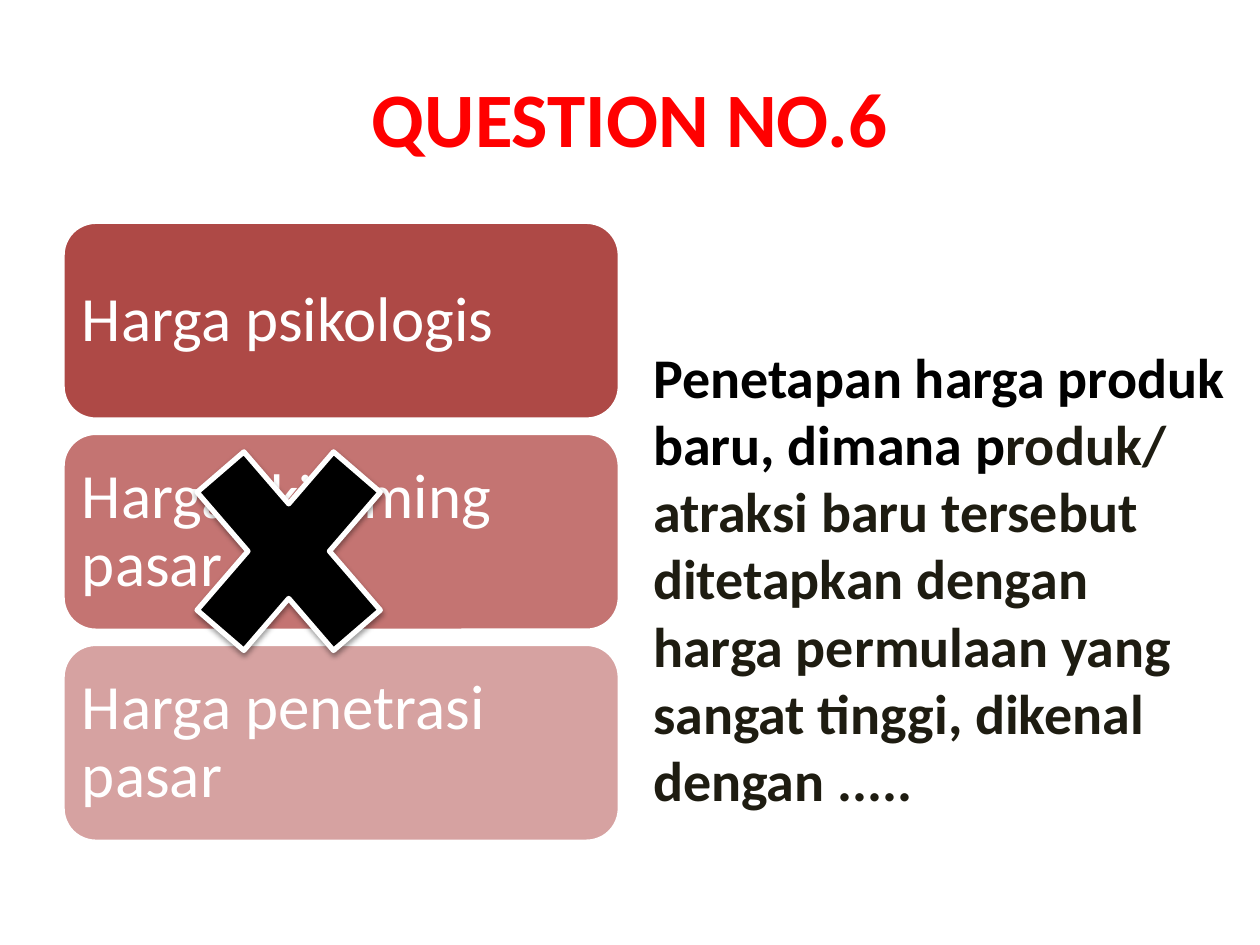
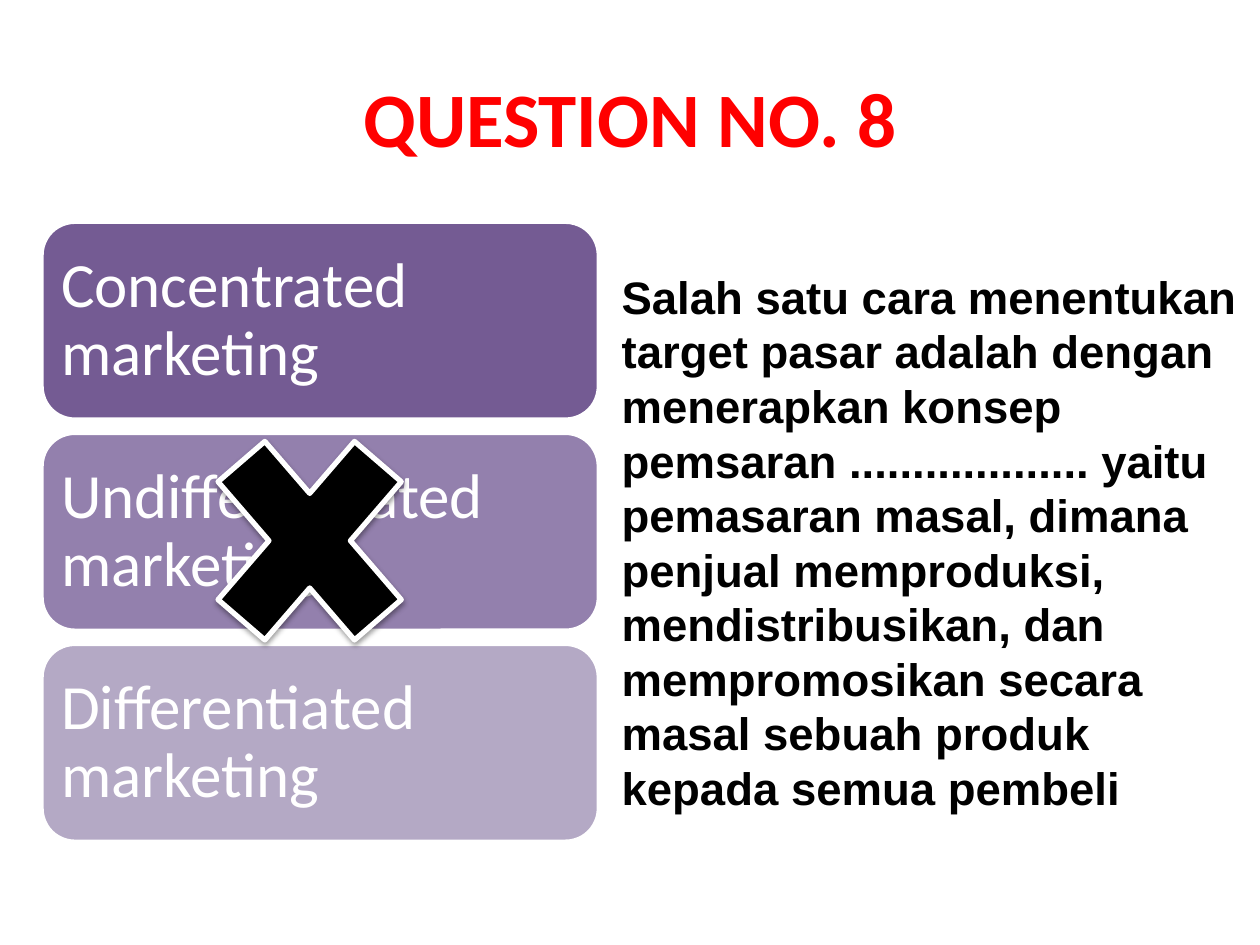
import pptx
import pptx.dml.color
import pptx.enum.shapes
import pptx.enum.text
import pptx.oxml
import pptx.oxml.ns
import pptx.util
from pptx.util import Pt

QUESTIONS = [
    {
        "title": "QUESTION NO.6",
        "answers": ["Harga psikologis", "Harga skimming pasar", "Harga penetrasi pasar"],
        "tints": ["AE4946", "C47472", "D6A2A1"],
        "answers_left": 36,
        "prompt": [
            ("Penetapan harga produk baru, dimana p", "000000"),
            ("roduk/ atraksi baru tersebut ditetapkan dengan harga permulaan "
             "yang sangat tinggi, dikenal dengan .....", "1E1C11"),
        ],
        "prompt_font": ("Calibri", 32),
        "prompt_area": (366, 192, 342, 276),
        "cross_corner": (90, 228),
    },
    {
        "title": "QUESTION NO. 8",
        "answers": ["Concentrated marketing", "Undifferentiated marketing",
                    "Differentiated marketing"],
        "tints": ["745B93", "9380AD", "B4A9C5"],
        "answers_left": 24,
        "prompt": [
            ("Salah satu cara menentukan target pasar adalah dengan menerapkan konsep "
             "pemsaran ................... yaitu pemasaran masal, dimana penjual "
             "memproduksi, mendistribusikan, dan mempromosikan secara masal sebuah "
             "produk kepada semua pembeli", "000000"),
        ],
        "prompt_font": ("Arial", 26),
        "prompt_area": (348, 150, 372, 264),
        "cross_corner": (102, 222),
    },
]

THEME = {
    "font": "Calibri",
    "title_color": "FF0000", "title_size": 44,
    "answer_color": "FFFFFF", "answer_size": 36,
    "outline": "FFFFFF", "cross": "000000",
}
SLIDE_SIZE = (720, 540)
TITLE_AREA = (36, 21.6, 648, 90)
ANSWER_TOP, ANSWER_WIDTH, ANSWER_HEIGHT, ANSWER_GAP = 127, 318, 112.6, 8
ANSWER_INSET = 5.4
CROSS_SIZE = (150, 174)
CROSS_SHADOW = (
    f'<a:outerShdw {pptx.oxml.ns.nsdecls("a")} blurRad="{Pt(3.1)}" dist="{Pt(1.6)}" '
    'dir="5400000" rotWithShape="0"><a:srgbClr val="000000">'
    '<a:alpha val="38000"/></a:srgbClr></a:outerShdw>'
)


def rgb(code):
    return pptx.dml.color.RGBColor.from_string(code)


def place(shape, area):
    shape.left, shape.top, shape.width, shape.height = map(Pt, area)


def add_run(paragraph, text, font, size, color, bold=False):
    run = paragraph.add_run()
    run.text = text
    run.font.name, run.font.size, run.font.bold = font, Pt(size), bold
    run.font.color.rgb = rgb(color)


def add_outlined(slide, preset, area, fill, line_width):
    shape = slide.shapes.add_shape(preset, *map(Pt, area))
    shape.fill.solid()
    shape.fill.fore_color.rgb = rgb(fill)
    shape.line.color.rgb = rgb(THEME["outline"])
    shape.line.width = Pt(line_width)
    shape.shadow.inherit = False
    return shape


def add_title(slide, text):
    title = slide.shapes.title
    place(title, TITLE_AREA)
    title.text_frame.vertical_anchor = pptx.enum.text.MSO_ANCHOR.MIDDLE
    paragraph = title.text_frame.paragraphs[0]
    paragraph.alignment = pptx.enum.text.PP_ALIGN.CENTER
    add_run(paragraph, text, THEME["font"], THEME["title_size"], THEME["title_color"], True)


def add_answers(slide, answers, tints, left):
    for row, (answer, tint) in enumerate(zip(answers, tints)):
        top = ANSWER_TOP + row * (ANSWER_HEIGHT + ANSWER_GAP)
        box = add_outlined(slide, pptx.enum.shapes.MSO_SHAPE.ROUNDED_RECTANGLE,
                           (left, top, ANSWER_WIDTH, ANSWER_HEIGHT), tint, 2)
        frame = box.text_frame
        frame.word_wrap = True
        frame.vertical_anchor = pptx.enum.text.MSO_ANCHOR.MIDDLE
        frame.margin_left = frame.margin_right = Pt(ANSWER_INSET)
        frame.margin_top = frame.margin_bottom = Pt(ANSWER_INSET)
        paragraph = frame.paragraphs[0]
        paragraph.alignment = pptx.enum.text.PP_ALIGN.LEFT
        paragraph.line_spacing = 0.9
        add_run(paragraph, answer, THEME["font"], THEME["answer_size"], THEME["answer_color"])


def add_prompt(slide, pieces, font, area):
    body = slide.placeholders[1]
    place(body, area)
    body.text_frame.auto_size = pptx.enum.text.MSO_AUTO_SIZE.NONE
    paragraph = body.text_frame.paragraphs[0]
    properties = paragraph._p.get_or_add_pPr()
    properties.set("marL", "0")
    properties.set("indent", "0")
    properties.append(pptx.oxml.parse_xml(f'<a:buNone {pptx.oxml.ns.nsdecls("a")}/>'))
    for text, color in pieces:
        add_run(paragraph, text, *font, color, True)


def add_cross(slide, corner):
    cross = add_outlined(slide, pptx.enum.shapes.MSO_SHAPE.MATH_MULTIPLY,
                         corner + CROSS_SIZE, THEME["cross"], 3)
    effects = cross._element.spPr.find(pptx.oxml.ns.qn("a:effectLst"))
    effects.append(pptx.oxml.parse_xml(CROSS_SHADOW))


def main():
    deck = pptx.Presentation()
    deck.slide_width, deck.slide_height = map(Pt, SLIDE_SIZE)
    for question in QUESTIONS:
        slide = deck.slides.add_slide(deck.slide_layouts[1])
        add_title(slide, question["title"])
        add_answers(slide, question["answers"], question["tints"], question["answers_left"])
        add_prompt(slide, question["prompt"], question["prompt_font"], question["prompt_area"])
        add_cross(slide, question["cross_corner"])
    deck.save("out.pptx")


if __name__ == "__main__":
    main()
